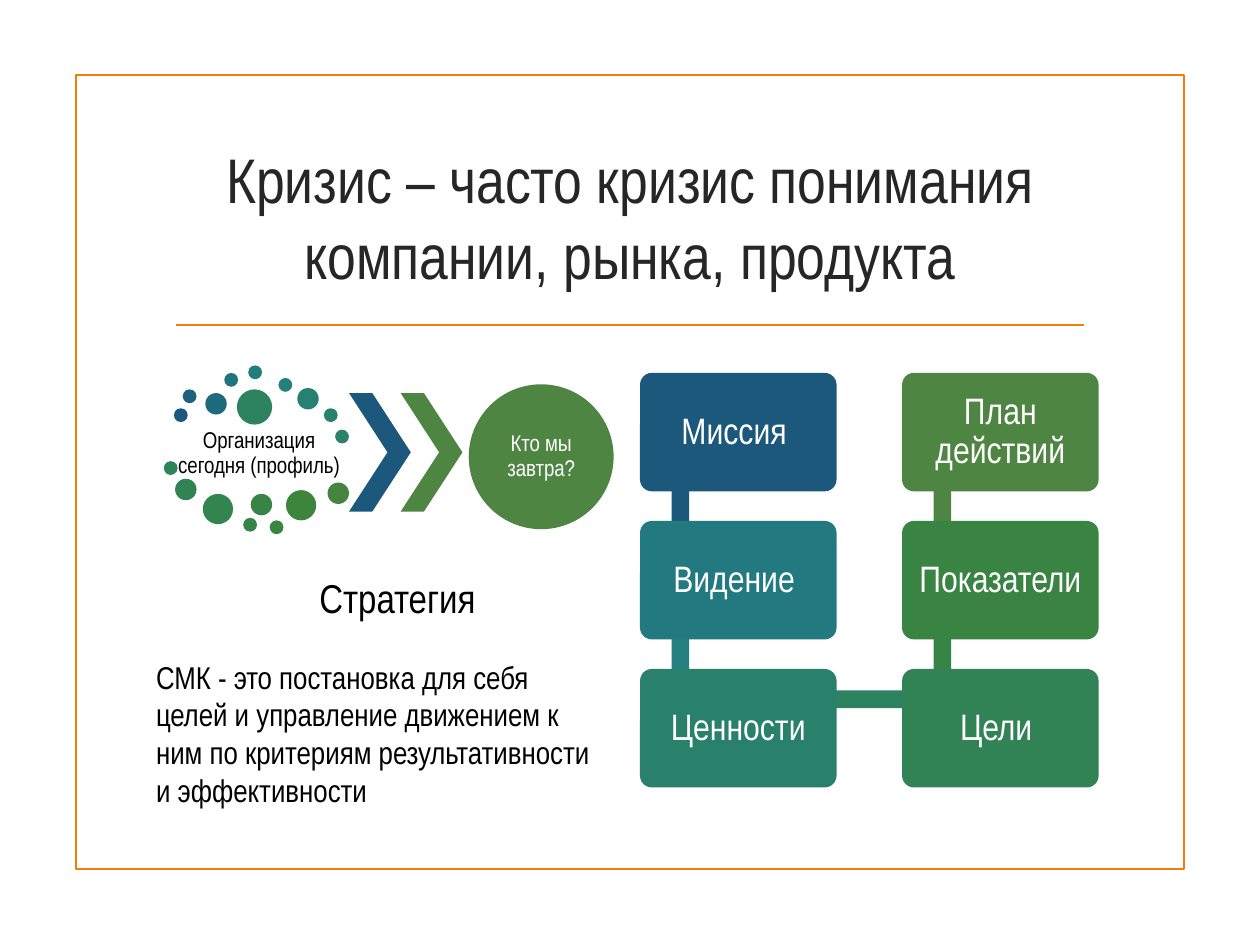
from pptx import Presentation
from pptx.dml.color import RGBColor
from pptx.enum.shapes import MSO_CONNECTOR, MSO_SHAPE
from pptx.enum.text import MSO_ANCHOR, PP_ALIGN
from pptx.oxml.ns import qn
from pptx.util import Inches, Pt

COLS, ROWS = 100, 75
CELL = Inches(0.1)  # the slide is a grid of 100 x 75 square cells
FONT = "Arial Narrow"
COLORS = {
    "accent": "F07F09", "title": "262626", "black": "000000", "white": "FFFFFF",
    "blue": "1B587C", "green": "4E8542",
    "mission": "1B587C", "vision": "22797F", "values": "29816B",
    "goals": "318355", "metrics": "398443", "plan": "4E8542",
    "link1": "1B587C", "link2": "23807E", "link3": "2D8260",
    "link4": "378447", "link5": "4E8542",
    "dot1": "1B587C", "dot2": "1D617D", "dot3": "1F6B7E", "dot4": "20747F",
    "dot5": "227D7F", "dot6": "24807B", "dot7": "268173", "dot8": "28816D",
    "dot9": "2B8266", "dot10": "2D8260", "dot11": "2F835A", "dot12": "318354",
    "dot13": "33844E", "dot14": "368449", "dot15": "388445", "dot16": "3A8540",
    "dot17": "3D853D", "dot18": "46853F",
}

prs = Presentation()
prs.slide_width, prs.slide_height = COLS * CELL, ROWS * CELL
s = prs.slides.add_slide(prs.slide_layouts[6])


def add(kind, x, y, w, h, fill=None, adj=None):
    """Add a preset shape, or a text box when kind is None; lengths in cells."""
    box = [round(v * CELL) for v in (x, y, w, h)]
    if kind is None:
        return s.shapes.add_textbox(*box)
    sp = s.shapes.add_shape(kind, *box)
    sp.shadow.inherit = False
    sp.line.fill.background()
    if fill:
        sp.fill.solid()
        sp.fill.fore_color.rgb = RGBColor.from_string(COLORS[fill])
    else:
        sp.fill.background()
    if adj is not None:
        sp.adjustments[0] = adj
    return sp


def write(sp, text, size, color="black", align=PP_ALIGN.CENTER,
          anchor=MSO_ANCHOR.MIDDLE, inset=None, spacing=None):
    tf = sp.text_frame
    tf.word_wrap = True
    tf.vertical_anchor = anchor
    if inset is not None:
        tf.margin_left = tf.margin_right = Inches(inset)
        tf.margin_top = tf.margin_bottom = Inches(inset)
    p = tf.paragraphs[0]
    p.alignment, p.line_spacing = align, spacing
    r = p.add_run()
    r.text = text
    r.font.name, r.font.size = FONT, Pt(size)
    r.font.color.rgb = RGBColor.from_string(COLORS[color])


# Frame, title and rule
frame = add(MSO_SHAPE.RECTANGLE, 6.05, 5.95, 87.9, 63)
rule = s.shapes.add_connector(MSO_CONNECTOR.STRAIGHT, 14 * CELL, round(25.8 * CELL),
                              86 * CELL, round(25.8 * CELL))
spPr = rule._element.spPr
spPr.append(spPr.makeelement(qn("a:effectLst"), {}))
for sp in (frame, rule):
    sp.line.color.rgb = RGBColor.from_string(COLORS["accent"])
    sp.line.width = Pt(1.25)
write(add(None, 12.8, 10, 74.4, 14.3),
      "Кризис – часто кризис понимания компании, рынка, продукта", 36, "title")

# Cloud of dots around today's organisation: left, top, diameter
write(add(None, 13.8, 33.8, 13.5, 4.4), "Организация сегодня (профиль)", 13,
      inset=0.02, spacing=0.9)
dots = [
    (13.8, 32.4, 1.1), (14.5, 30.9, 1.1), (16.3, 31.2, 1.7), (17.8, 29.6, 1.1),
    (19.7, 29, 1.1), (22.1, 30, 1.1), (23.6, 30.8, 1.7), (25.7, 32.4, 1.1),
    (26.6, 34.1, 1.1), (18.8, 30.9, 2.8), (13, 36.6, 1.1), (13.9, 38, 1.7),
    (16.1, 39.2, 2.4), (19.3, 41.1, 1.1), (19.9, 39.2, 1.7), (21.4, 41.3, 1.1),
    (22.7, 38.9, 2.4), (26, 38.3, 1.7),
]
for i, (x, y, d) in enumerate(dots, 1):
    add(MSO_SHAPE.OVAL, x, y, d, d, f"dot{i}")

# Chevrons leading to tomorrow
for i, color in enumerate(("blue", "green")):
    add(MSO_SHAPE.CHEVRON, 27.7 + 4.1 * i, 31.2, 4.9, 9.4, color, 0.623)
write(add(MSO_SHAPE.OVAL, 37.2, 30.5, 11.5, 11.5, "green"), "Кто мы завтра?", 13,
      "white", inset=0, spacing=0.9)
write(add(None, 24.8, 43.5, 13.5, 8.3), "Стратегия ", 23, inset=0.03, spacing=0.9)

# Planning chain: down the left column, across, up the right column
X0, Y0, DX, DY = 50.8, 29.6, 20.8, 11.75
NODE_W, NODE_H, BAR = 15.6, 9.4, 1.4
chain = [
    ("Миссия ", "mission", 0, 0), ("Видение ", "vision", 0, 1),
    ("Ценности", "values", 0, 2), ("Цели ", "goals", 1, 2),
    ("Показатели ", "metrics", 1, 1), ("План действий", "plan", 1, 0),
]
for i, (a, b) in enumerate(zip(chain, chain[1:]), 1):
    x, y = X0 + 2.5 + DX * a[2], Y0 + 2.4 + DY * min(a[3], b[3])
    if a[2] == b[2]:
        add(MSO_SHAPE.RECTANGLE, x, y, BAR, DY, f"link{i}")
    else:
        add(MSO_SHAPE.RECTANGLE, x, y - 0.7, DX, BAR, f"link{i}")
for text, color, col, row in chain:
    node = add(MSO_SHAPE.ROUNDED_RECTANGLE, X0 + DX * col, Y0 + DY * row,
               NODE_W, NODE_H, color, 0.1)
    write(node, text, 21, "white", inset=0.11, spacing=0.9)

# Conclusion
write(add(None, 11.4, 51.7, 37, 13.1),
      "СМК - это постановка для себя целей и управление движением к ним "
      "по критериям результативности и эффективности",
      18, align=PP_ALIGN.LEFT, anchor=MSO_ANCHOR.TOP)

prs.save("out.pptx")
